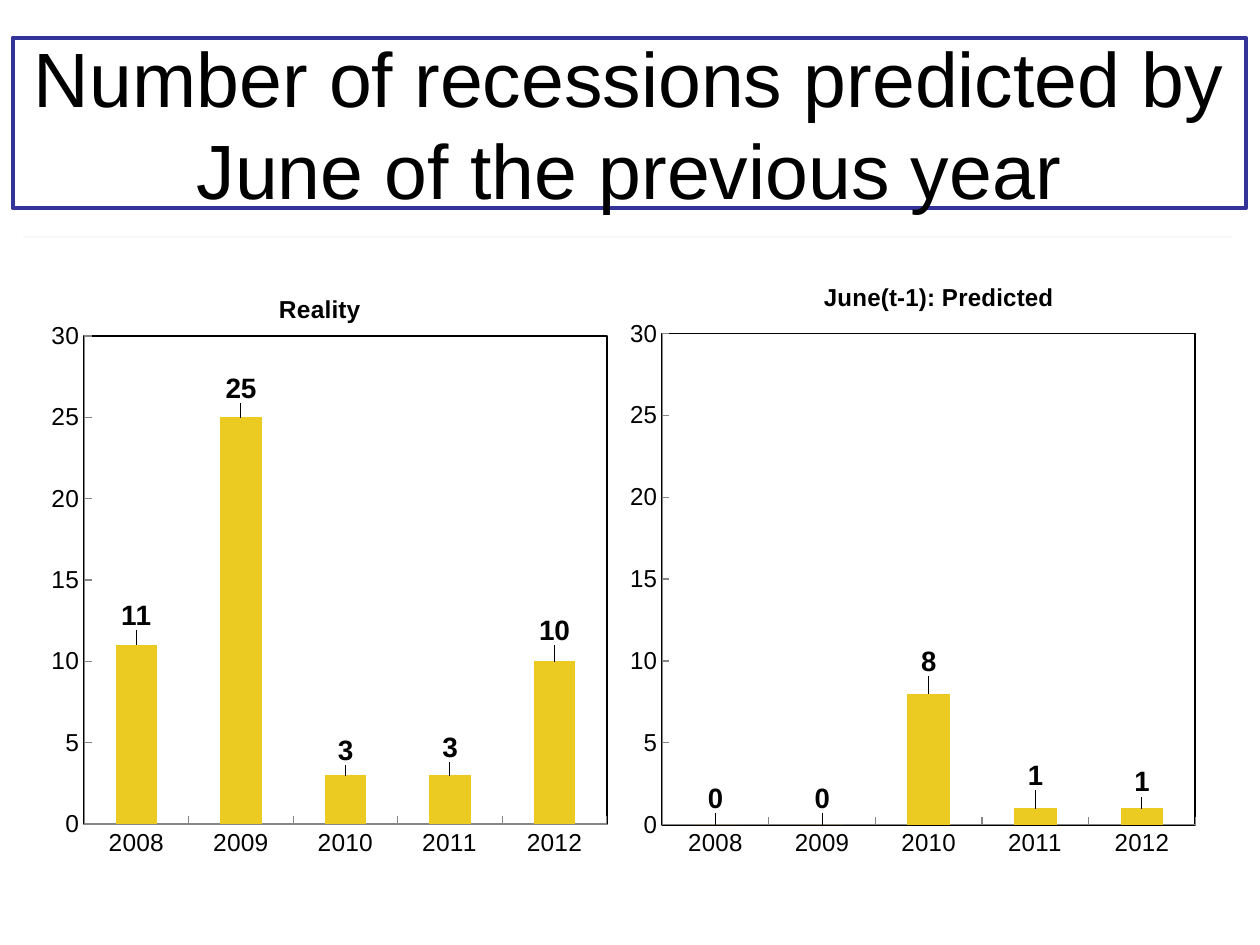
from dataclasses import dataclass

from lxml.etree import SubElement
from pptx import Presentation
from pptx.chart.data import CategoryChartData
from pptx.dml.color import RGBColor
from pptx.enum.chart import XL_CHART_TYPE, XL_LABEL_POSITION, XL_TICK_MARK
from pptx.enum.shapes import MSO_CONNECTOR
from pptx.enum.text import MSO_ANCHOR, PP_ALIGN
from pptx.oxml import parse_xml
from pptx.oxml.ns import nsdecls, qn
from pptx.util import Inches, Pt


@dataclass(frozen=True)
class Theme:
    font: str = "Arial"
    text: RGBColor = RGBColor(0x00, 0x00, 0x00)
    frame: RGBColor = RGBColor(0x33, 0x33, 0x99)
    rule: RGBColor = RGBColor(0xF9, 0xF9, 0xF9)
    bar: RGBColor = RGBColor(0xEB, 0xCA, 0x21)
    axis: RGBColor = RGBColor(0x86, 0x86, 0x86)
    title_size: Pt = Pt(44)
    label_size: Pt = Pt(16)
    axis_size: Pt = Pt(14)
    chart_size: Pt = Pt(12)


THEME = Theme()
YEARS = ["2008", "2009", "2010", "2011", "2012"]
# Box in inches; plot, title and label lifts as fractions of the chart
CHARTS = [
    dict(title="Reality", box=(0.18, 2.1, 4.65, 4.8), values=[11, 25, 3, 3, 10],
         plot=(0.105, 0.118, 0.892, 0.807), title_at=(0.43, 0.04),
         lifts=[0.015, 0.015, 0.007, 0.012, 0.018]),
    dict(title="June(t-1): Predicted", box=(5, 2, 4.67, 4.98), values=[0, 0, 8, 1, 1],
         plot=(0.038, 0.13, 0.922, 0.783), title_at=(0.31, 0.04),
         lifts=[0.01, 0.01, 0.02, 0.02, 0.01]),
]


def set_layout(parent, index, **settings):
    """Give a chart part a manual layout, as its child number index."""
    for old_layout in parent.findall(qn("c:layout")):
        parent.remove(old_layout)
    layout = parse_xml(f"<c:layout {nsdecls('c')}><c:manualLayout/></c:layout>")
    for name, value in settings.items():
        SubElement(layout[0], qn(f"c:{name}")).set("val", str(value))
    parent.insert(index, layout)


def style_font(font, size, bold=False):
    font.name = THEME.font
    font.size = size
    font.bold = bold
    font.color.rgb = THEME.text


presentation = Presentation()
presentation.slide_width = Inches(10)
presentation.slide_height = Inches(7.5)
slide = presentation.slides.add_slide(presentation.slide_layouts[6])

# Framed title
title = slide.shapes.add_textbox(Inches(0.1), Inches(0.3), Inches(9.79), Inches(1.35))
title.line.color.rgb = THEME.frame
title.line.width = Pt(2.25)
title.text_frame.word_wrap = True
title.text_frame.vertical_anchor = MSO_ANCHOR.MIDDLE
paragraph = title.text_frame.paragraphs[0]
paragraph.text = "Number of recessions predicted by June of the previous year"
paragraph.alignment = PP_ALIGN.CENTER
style_font(paragraph.font, THEME.title_size)

# Rule below the title
rule = slide.shapes.add_connector(
    MSO_CONNECTOR.STRAIGHT, Inches(0.18), Inches(1.88), Inches(9.78), Inches(1.88))
rule.line.color.rgb = THEME.rule
rule.line.width = Pt(1.5)
SubElement(rule.element.spPr, qn("a:effectLst"))

# Column charts
for details in CHARTS:
    data = CategoryChartData()
    data.categories = YEARS
    data.add_series("Series 1", details["values"])
    chart = slide.shapes.add_chart(
        XL_CHART_TYPE.COLUMN_CLUSTERED, *map(Inches, details["box"]), data).chart
    chart.has_legend = False
    style_font(chart.font, THEME.chart_size)

    chart.has_title = True
    paragraph = chart.chart_title.text_frame.paragraphs[0]
    paragraph.text = details["title"]
    style_font(paragraph.font, THEME.axis_size, bold=True)
    title_element = chart.element.find(".//" + qn("c:title"))
    left, top = details["title_at"]
    set_layout(title_element, 1, xMode="edge", yMode="edge", x=left, y=top)
    title_element.find(qn("c:overlay")).set("val", "1")

    for axis in (chart.category_axis, chart.value_axis):
        axis.has_major_gridlines = False
        axis.major_tick_mark = XL_TICK_MARK.INSIDE
        axis.format.line.color.rgb = THEME.axis
        style_font(axis.tick_labels.font, THEME.axis_size)
    chart.value_axis.minimum_scale = 0
    chart.value_axis.maximum_scale = 30
    chart.value_axis.major_unit = 5

    plot = chart.plots[0]
    plot.gap_width = 150
    plot.vary_by_categories = False
    series = plot.series[0]
    series.format.fill.solid()
    series.format.fill.fore_color.rgb = THEME.bar
    for index in range(len(YEARS)):
        label = series.points[index].data_label
        style_font(label.font, THEME.label_size, bold=True)
        label.position = XL_LABEL_POSITION.OUTSIDE_END
    label_elements = chart.element.findall(".//" + qn("c:dLbl"))
    for label_element, lift in zip(label_elements, details["lifts"]):
        set_layout(label_element, 1, x=0, y=-lift)

    plot_area = chart.element.find(".//" + qn("c:plotArea"))
    left, top, width, height = details["plot"]
    set_layout(plot_area, 0, layoutTarget="inner", xMode="edge", yMode="edge",
               x=left, y=top, w=width, h=height)
    plot_area.append(parse_xml(
        f"<c:spPr {nsdecls('c', 'a')}><a:noFill/><a:ln w='{Pt(1)}'><a:solidFill>"
        f"<a:srgbClr val='{THEME.text}'/></a:solidFill></a:ln></c:spPr>"))

presentation.save("out.pptx")
